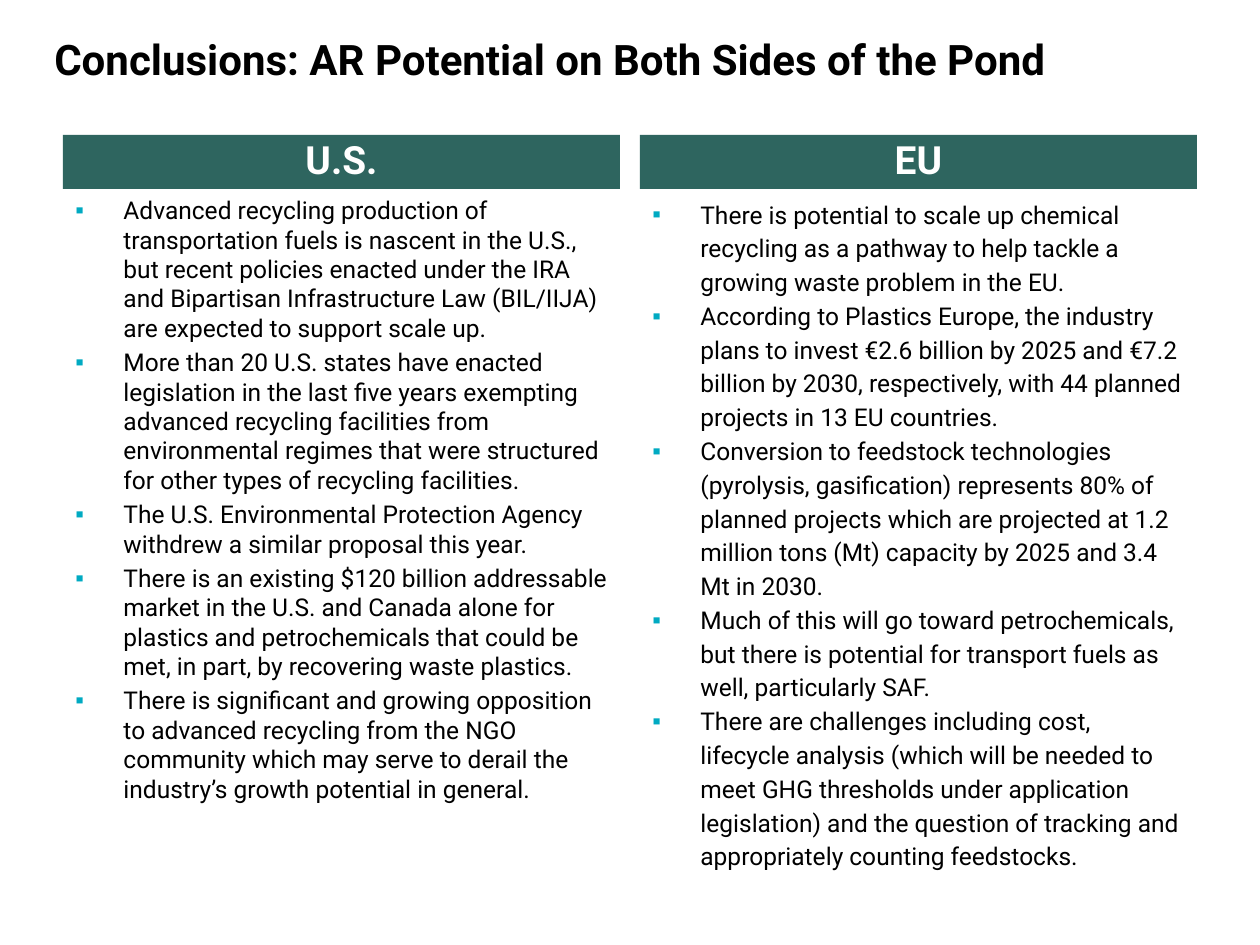
import pptx
import pptx.util
import pptx.dml.color
import pptx.enum.shapes
import pptx.enum.text
import pptx.oxml
import pptx.oxml.ns

Cm, Pt = pptx.util.Cm, pptx.util.Pt
ALIGN = pptx.enum.text.PP_ALIGN
ANCHOR = pptx.enum.text.MSO_ANCHOR

US = [
    "Advanced recycling production of transportation fuels is nascent in the U.S., but recent "
    "policies enacted under the IRA and Bipartisan Infrastructure Law (BIL/IIJA) are expected "
    "to support scale up.",
    "More than 20 U.S. states have enacted legislation in the last five years exempting advanced "
    "recycling facilities from environmental regimes that were structured for other types of "
    "recycling facilities.",
    "The U.S. Environmental Protection Agency withdrew a similar proposal this year.",
    "There is an existing $120 billion addressable market in the U.S. and Canada alone for "
    "plastics and petrochemicals that could be met, in part, by recovering waste plastics.",
    "There is significant and growing opposition to advanced recycling from the NGO community "
    "which may serve to derail the industry’s growth potential in general.",
]
EU = [
    "There is potential to scale up chemical recycling as a pathway to help tackle a growing "
    "waste problem in the EU.",
    "According to Plastics Europe, the industry plans to invest €2.6 billion by 2025 and "
    "€7.2 billion by 2030, respectively, with 44 planned projects in 13 EU countries.",
    "Conversion to feedstock technologies (pyrolysis, gasification) represents 80% of planned "
    "projects which are projected at 1.2 million tons (Mt) capacity by 2025 and 3.4 Mt in 2030.",
    "Much of this will go toward petrochemicals, but there is potential for transport fuels as "
    "well, particularly SAF.",
    "There are challenges including cost, lifecycle analysis (which will be needed to meet GHG "
    "thresholds under application legislation) and the question of tracking and appropriately "
    "counting feedstocks.",
]


def shade(code):
    return pptx.dml.color.RGBColor.from_string(code)


def mark(para, code="00AAC2", indent=Cm(0.97)):
    """Give a paragraph a hanging square bullet."""
    props = para._p.get_or_add_pPr()
    props.set("marL", str(indent))
    props.set("indent", str(-indent))
    space = pptx.oxml.ns.nsdecls("a")
    for tag in (f'<a:buClr {space}><a:srgbClr val="{code}"/></a:buClr>',
                f'<a:buFont {space} typeface="Arial"/>',
                f'<a:buChar {space} char="▪"/>'):
        props.append(pptx.oxml.parse_xml(tag))


def write(frame, text, size=14, color="000000", bold=False, align=ALIGN.LEFT,
          anchor=ANCHOR.TOP, bullet=False, gap=0, pitch=1.0):
    """Fill a text frame; a list of strings gives one paragraph each."""
    frame.word_wrap = True
    frame.auto_size = pptx.enum.text.MSO_AUTO_SIZE.NONE
    frame.vertical_anchor = anchor
    lines = [text] if isinstance(text, str) else text
    for i, line in enumerate(lines):
        para = frame.add_paragraph() if i else frame.paragraphs[0]
        para.text = line
        if bullet:
            mark(para)
        para.alignment = align
        para.line_spacing = pitch
        para.space_before = Pt(gap if i else 0)
        font = para.font
        font.name, font.size, font.bold = "Roboto", Pt(size), bold
        font.color.rgb = shade(color)


def head(slide, text, left, top, width, height):
    title = slide.shapes.title
    title.left, title.top, title.width, title.height = left, top, width, height
    write(title.text_frame, text, size=24, bold=True, anchor=ANCHOR.MIDDLE)


def column(slide, name, points, left, top, width, height, **form):
    # Header band
    band = Cm(1.09)
    bar = slide.shapes.add_shape(pptx.enum.shapes.MSO_SHAPE.RECTANGLE, left, top, width, band)
    bar.shadow.inherit = False
    bar.fill.solid()
    bar.fill.fore_color.rgb = shade("2E655F")
    bar.line.fill.background()
    write(bar.text_frame, name, size=22.2, color="FFFFFF", bold=True,
          align=ALIGN.CENTER, anchor=ANCHOR.BOTTOM)

    # Bulleted points
    box = slide.shapes.add_textbox(left, top + band, width, height - band)
    write(box.text_frame, points, bullet=True, **form)


def main():
    deck = pptx.Presentation()
    deck.slide_width, deck.slide_height = Cm(25.4), Cm(19.05)
    slide = deck.slides.add_slide(deck.slide_layouts[5])
    head(slide, "Conclusions: AR Potential on Both Sides of the Pond",
         Cm(0.84), Cm(0.46), Cm(24.18), Cm(1.45))

    # Two equal columns between the side margins
    edge, space = Cm(1.27), Cm(0.4)
    width = (deck.slide_width - 2 * edge - space) // 2
    sides = [("U.S.", US, {"gap": 2.8}), ("EU", EU, {"pitch": 1.15})]
    for i, (name, points, form) in enumerate(sides):
        column(slide, name, points, edge + i * (width + space), Cm(2.72),
               width, Cm(15.87), **form)
    deck.save("out.pptx")


if __name__ == "__main__":
    main()
